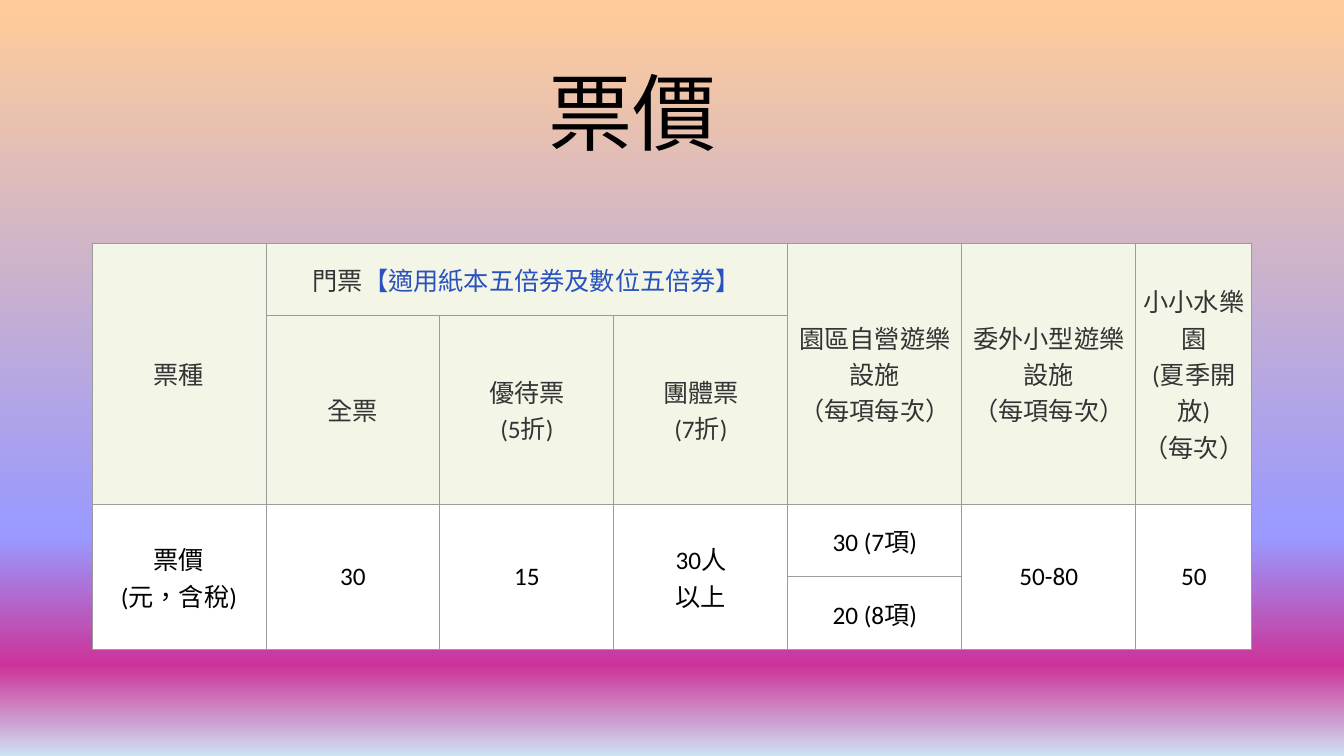
import pptx
import pptx.dml.color
import pptx.enum.lang
import pptx.enum.text
import pptx.oxml
import pptx.oxml.ns
import pptx.util

PX = 12192000 / 1344
FONT = {"name": "Calibri",
        "language_id": pptx.enum.lang.MSO_LANGUAGE_ID.TRADITIONAL_CHINESE}
MIDDLE = pptx.enum.text.MSO_ANCHOR.MIDDLE
CENTER = pptx.enum.text.PP_ALIGN.CENTER
BLACK, GREY, BLUE = "000000", "343434", "2A52BE"
GRADIENT = [(0, "FFCC99"), (71, "9999FF"), (88, "CC3399"), (100, "CEE1F2")]
COLS = [174] * 6 + [116]
ROWS = [72, 189, 73, 73]
HEADER_ROWS = 2
TICKETS = [
    (0, 0, 2, 1, "票種"),
    (0, 1, 1, 3, "門票"),
    (0, 4, 2, 1, "園區自營遊樂設施\n（每項每次）"),
    (0, 5, 2, 1, "委外小型遊樂設施\n（每項每次）"),
    (0, 6, 2, 1, "小小水樂園\n(夏季開放)\n（每次）"),
    (1, 1, 1, 1, "全票"),
    (1, 2, 1, 1, "優待票\n(5折)"),
    (1, 3, 1, 1, "團體票\n(7折)"),
    (2, 0, 2, 1, "票價\n(元，含稅)"),
    (2, 1, 2, 1, "30"),
    (2, 2, 2, 1, "15"),
    (2, 3, 2, 1, "30人\n以上"),
    (2, 4, 1, 1, "30 (7項)"),
    (3, 4, 1, 1, "20 (8項)"),
    (2, 5, 2, 1, "50-80"),
    (2, 6, 2, 1, "50"),
]


def px(n):
    return pptx.util.Emu(round(n * PX))


def rgb(value):
    return pptx.dml.color.RGBColor.from_string(value)


def apply(obj, values):
    for name, value in values.items():
        setattr(obj, name, value)


def add_text(p, text, size, color):
    for i, line in enumerate(text.split("\n")):
        if i:
            p.add_line_break()
        r = p.add_run()
        r.text = line
        apply(r.font, {**FONT, "size": pptx.util.Pt(size)})
        r.font.color.rgb = rgb(color)


def set_background(s, stops, angle):
    gs = "".join(f'<a:gs pos="{pos * 1000}"><a:srgbClr val="{color}"/></a:gs>'
                 for pos, color in stops)
    s._element.cSld.insert(0, pptx.oxml.parse_xml(
        f'<p:bg {pptx.oxml.ns.nsdecls("p", "a")}><p:bgPr>'
        f'<a:gradFill rotWithShape="1"><a:gsLst>{gs}</a:gsLst>'
        f'<a:lin ang="{angle * 60000}" scaled="0"/></a:gradFill>'
        '<a:effectLst/></p:bgPr></p:bg>'))


def set_borders(cell, color, width):
    tcPr = cell._tc.get_or_add_tcPr()
    for i, side in enumerate(("lnL", "lnR", "lnT", "lnB")):
        tcPr.insert(i, pptx.oxml.parse_xml(
            f'<a:{side} {pptx.oxml.ns.nsdecls("a")} w="{pptx.util.Pt(width)}">'
            f'<a:solidFill><a:srgbClr val="{color}"/></a:solidFill></a:{side}>'))


def add_title(s, text, x, y, w, h):
    tf = s.shapes.add_textbox(px(x), px(y), px(w), px(h)).text_frame
    apply(tf, {"word_wrap": True, "vertical_anchor": MIDDLE})
    p = tf.paragraphs[0]
    p.line_spacing = 0.9
    add_text(p, text, 60, BLACK)


def add_price_table(s, x, y):
    table = s.shapes.add_table(len(ROWS), len(COLS), px(x), px(y),
                               px(sum(COLS)), px(sum(ROWS))).table
    apply(table, {"first_row": False, "horz_banding": False})
    for col, width in zip(table.columns, COLS):
        col.width = px(width)
    for i, (row, height) in enumerate(zip(table.rows, ROWS)):
        row.height = px(height)
        for cell in row.cells:
            cell.fill.solid()
            cell.fill.fore_color.rgb = rgb("F3F6E7" if i < HEADER_ROWS else "FFFFFF")
            set_borders(cell, "9C9C9C", 0.75)
            apply(cell, {"vertical_anchor": MIDDLE,
                         "margin_left": px(3), "margin_right": px(3),
                         "margin_top": px(3), "margin_bottom": px(3)})
    for i, j, rows, cols, text in TICKETS:
        cell = table.cell(i, j)
        if rows * cols > 1:
            cell.merge(table.cell(i + rows - 1, j + cols - 1))
        p = cell.text_frame.paragraphs[0]
        p.alignment = CENTER
        add_text(p, text, 18, GREY if i < HEADER_ROWS else BLACK)
    add_text(table.cell(0, 1).text_frame.paragraphs[0],
             "【適用紙本五倍券及數位五倍券】", 18, BLUE)


def main():
    prs = pptx.Presentation()
    apply(prs, {"slide_width": px(1344), "slide_height": px(756)})
    s = prs.slides.add_slide(prs.slide_layouts[6])
    set_background(s, GRADIENT, 90)
    add_title(s, "票價", 539, 51, 207, 132)
    add_price_table(s, 92, 243)
    prs.save("out.pptx")


if __name__ == "__main__":
    main()
